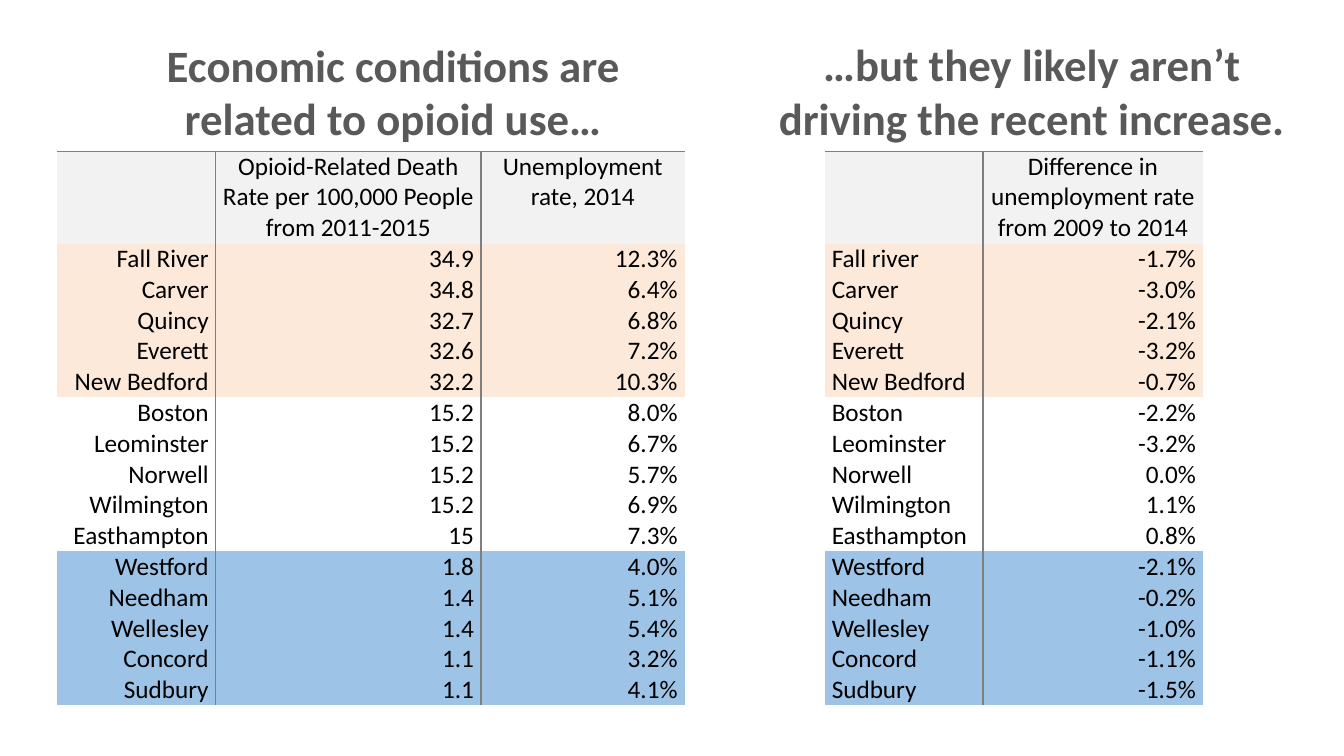
from lxml.etree import SubElement
from pptx import Presentation
from pptx.dml.color import RGBColor
from pptx.enum.text import MSO_ANCHOR as Anchor, MSO_AUTO_SIZE as AutoSize, PP_ALIGN as Align
from pptx.oxml.ns import qn
from pptx.util import Inches, Pt

NO_GRID_STYLE = "{2D5ABB26-0587-4C30-8999-92F81FD0307C}"
GRAY, PEACH, BLUE, RULE = "F2F2F2", "FDE9D9", "9DC3E6", "7F7F7F"
BANDS = [GRAY] + [PEACH] * 5 + [None] * 5 + [BLUE] * 5

RATES = [
    ("", "Opioid-Related Death Rate per 100,000 People from 2011-2015", "Unemployment rate, 2014"),
    ("Fall River", "34.9", "12.3%"),
    ("Carver", "34.8", "6.4%"),
    ("Quincy", "32.7", "6.8%"),
    ("Everett", "32.6", "7.2%"),
    ("New Bedford", "32.2", "10.3%"),
    ("Boston", "15.2", "8.0%"),
    ("Leominster", "15.2", "6.7%"),
    ("Norwell", "15.2", "5.7%"),
    ("Wilmington", "15.2", "6.9%"),
    ("Easthampton", "15", "7.3%"),
    ("Westford", "1.8", "4.0%"),
    ("Needham", "1.4", "5.1%"),
    ("Wellesley", "1.4", "5.4%"),
    ("Concord", "1.1", "3.2%"),
    ("Sudbury", "1.1", "4.1%"),
]
CHANGES = ["-1.7%", "-3.0%", "-2.1%", "-3.2%", "-0.7%", "-2.2%", "-3.2%", "0.0%",
           "1.1%", "0.8%", "-2.1%", "-0.2%", "-1.0%", "-1.1%", "-1.5%"]
TOWNS = ["Fall river"] + [row[0] for row in RATES[2:]]
DIFFERENCES = [("", "Difference in unemployment rate from 2009 to 2014"), *zip(TOWNS, CHANGES)]


def color(value):
    return RGBColor.from_string(value)


def apply(target, formats):
    for name, value in formats.items():
        setattr(target, name, value)


class SlideBuilder:
    heading_font = {"name": "Calibri", "size": Pt(32), "bold": True}
    table_font = {"name": "Calibri", "size": Pt(18), "bold": False}
    frame_format = {"word_wrap": True, "auto_size": AutoSize.NONE, "vertical_anchor": Anchor.TOP}
    cell_format = {"margin_left": Inches(0.07), "margin_right": Inches(0.07),
                   "margin_top": 0, "margin_bottom": 0, "vertical_anchor": Anchor.TOP}

    def __init__(self, page):
        self.page = page

    def put_text(self, frame, text, align, font, ink):
        para = frame.paragraphs[0]
        para.alignment = align
        if text:
            span = para.add_run()
            span.text = text
            apply(span.font, font)
            span.font.color.rgb = color(ink)
        else:
            apply(para.font, font)

    def heading(self, box, text, left, top, width, height):
        apply(box, {"left": Inches(left), "top": Inches(top),
                    "width": Inches(width), "height": Inches(height)})
        apply(box.text_frame, self.frame_format)
        self.put_text(box.text_frame, text, Align.CENTER, self.heading_font, "595959")

    def title(self, text, *place):
        self.heading(self.page.shapes.title, text, *place)

    def text_box(self, text, *place):
        self.heading(self.page.shapes.add_textbox(0, 0, 0, 0), text, *place)

    def border(self, cell, side):
        line = SubElement(cell._tc.get_or_add_tcPr(), qn(f"a:ln{side}"), w=str(Pt(1)))
        fill = SubElement(line, qn("a:solidFill"))
        SubElement(fill, qn("a:srgbClr"), val=RULE)

    def table(self, rows, left, top, widths, town_align):
        heights = [0.9] + [0.3] * (len(rows) - 1)
        frame = self.page.shapes.add_table(
            len(rows), len(widths), Inches(left), Inches(top),
            Inches(sum(widths)), Inches(sum(heights)))
        table = frame.table
        apply(table, {"first_row": False, "horz_banding": False})
        for style in frame.element.iter(qn("a:tableStyleId")):
            style.text = NO_GRID_STYLE
        for column, width in zip(table.columns, widths):
            column.width = Inches(width)
        for row, height in zip(table.rows, heights):
            row.height = Inches(height)
        for row_index, (values, band) in enumerate(zip(rows, BANDS)):
            for column_index, value in enumerate(values):
                cell = table.cell(row_index, column_index)
                apply(cell, self.cell_format)
                if column_index < 2:
                    self.border(cell, "RL"[column_index])
                if row_index == 0:
                    self.border(cell, "T")
                if band:
                    cell.fill.solid()
                    cell.fill.fore_color.rgb = color(band)
                else:
                    cell.fill.background()
                align = Align.CENTER if row_index == 0 else Align.RIGHT if column_index else town_align
                self.put_text(cell.text_frame, value, align, self.table_font, "000000")


def main():
    deck = Presentation()
    apply(deck, {"slide_width": Inches(13.33), "slide_height": Inches(7.5)})
    builder = SlideBuilder(deck.slides.add_slide(deck.slide_layouts[5]))
    builder.table(RATES, 0.57, 1.5, [1.57, 2.63, 2.02], Align.RIGHT)
    builder.title("Economic conditions are related to opioid use…", 1.35, 0.32, 5.1, 1.2)
    builder.table(DIFFERENCES, 8.18, 1.5, [1.57, 2.18], Align.LEFT)
    builder.text_box("…but they likely aren’t driving the recent increase.", 7.54, 0.32, 5.39, 1.03)
    deck.save("out.pptx")


if __name__ == "__main__":
    main()
